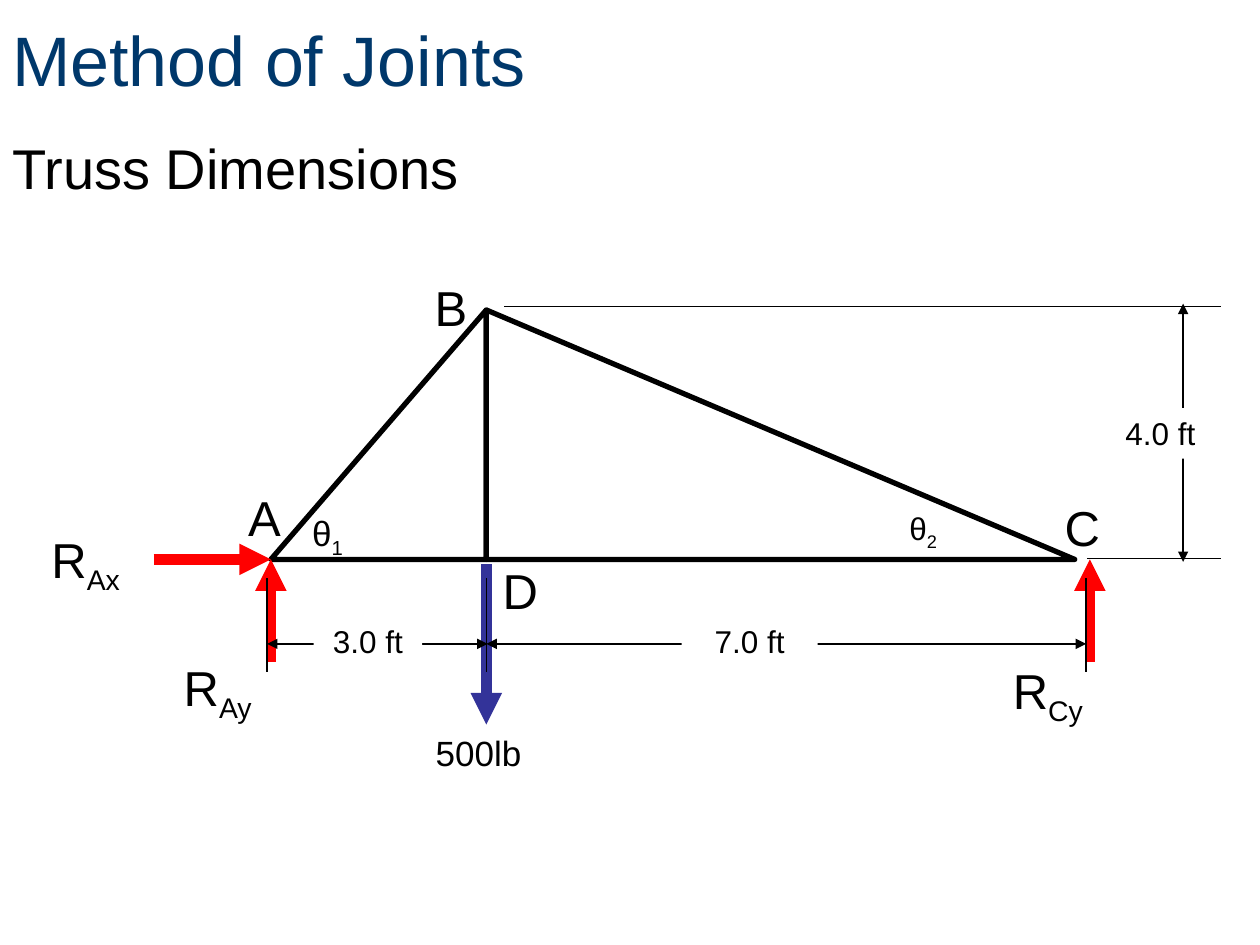
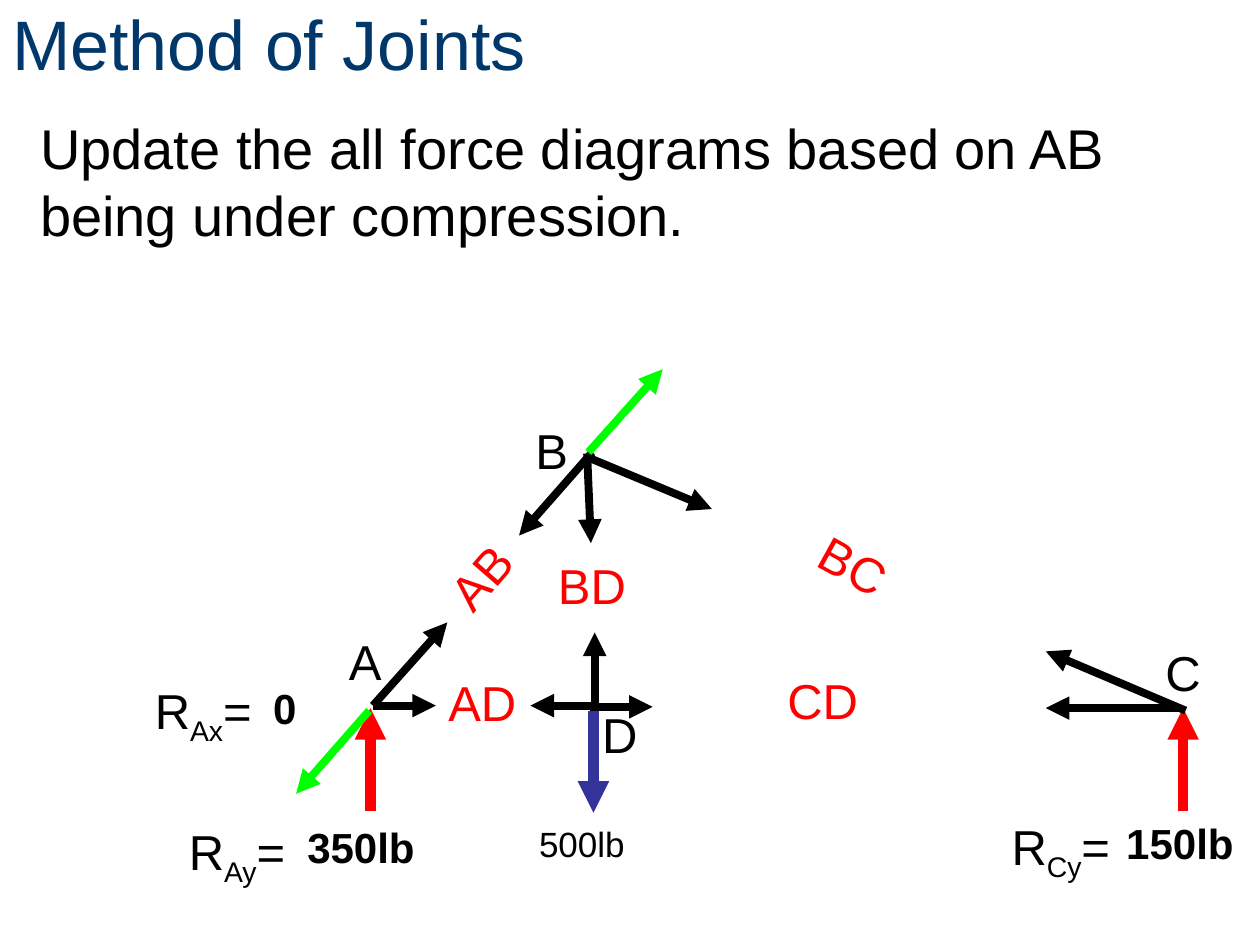
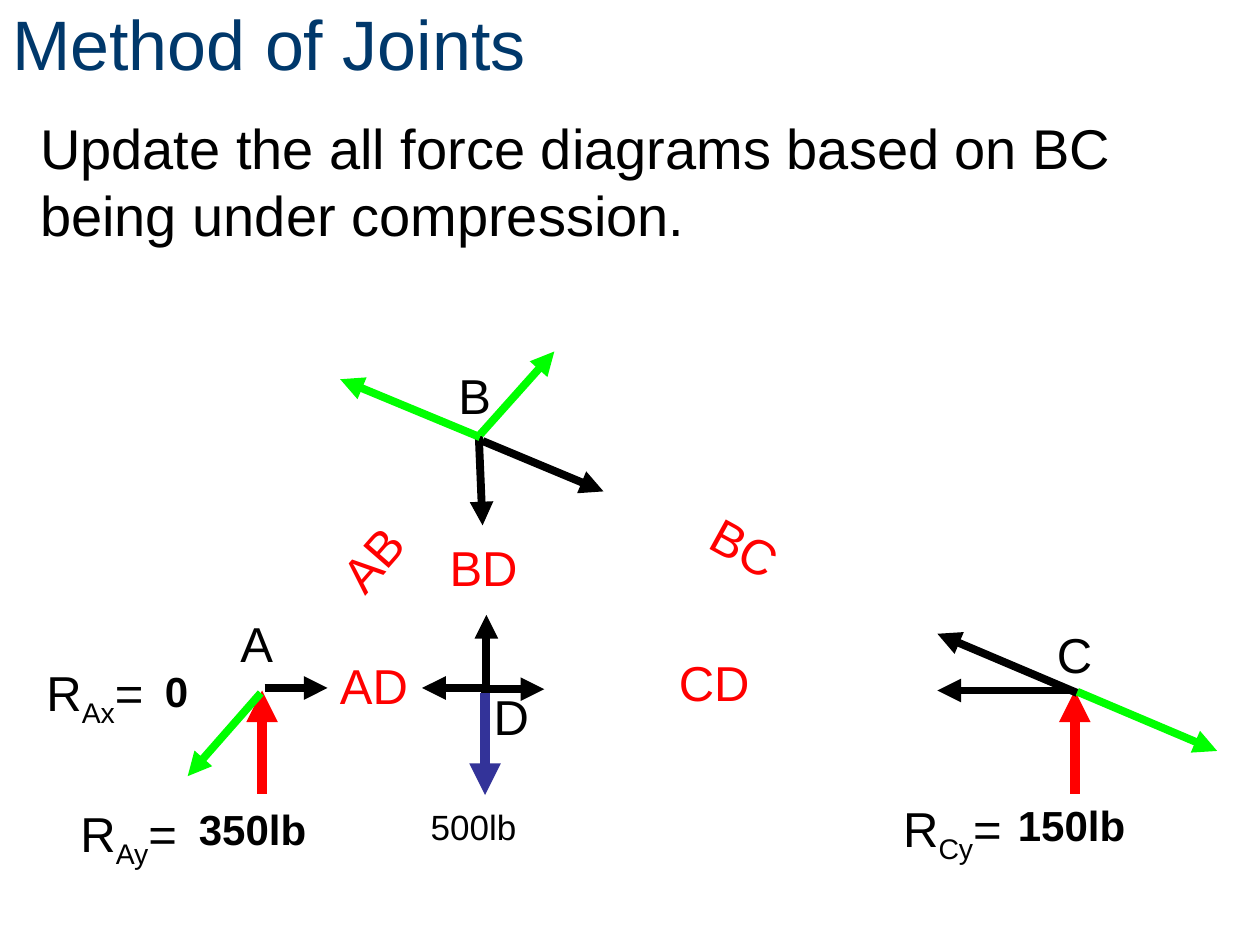
from pptx import Presentation
from pptx.dml.color import RGBColor
from pptx.enum.shapes import MSO_CONNECTOR, MSO_SHAPE
from pptx.enum.text import MSO_ANCHOR, MSO_AUTO_SIZE, PP_ALIGN
from pptx.oxml.ns import qn
from pptx.util import Inches, Pt
from lxml import etree

FONT = "Arial"
BLACK, WHITE, NAVY = "000000", "FFFFFF", "00386B"
RED, GREEN, BLUE = "FF0000", "00FF00", "333399"


def color(hex_string):
    return RGBColor.from_string(hex_string)


class Deck:
    """Shared style, the current slide and the offset of its drawing."""

    def __init__(self):
        self.prs = Presentation()
        self.prs.slide_width, self.prs.slide_height = Inches(10), Inches(7.5)

    def new_slide(self, title_height):
        self.s = self.prs.slides.add_slide(self.prs.slide_layouts[6])
        self.dx = self.dy = 0
        self.text("Method of Joints", 0, 0, 9, title_height, 40, NAVY, grow=False)

    def shift(self, dx, dy):
        self.dx, self.dy = dx, dy

    def point(self, x, y):
        return Inches(x + self.dx), Inches(y + self.dy)

    def text(self, words, x, y, w, h, size=28, ink=BLACK, bold=False,
             rotation=0, fill=None, grow=True):
        """Add a text box; a part between underscores is a subscript."""
        sp = self.s.shapes.add_textbox(*self.point(x, y), Inches(w), Inches(h))
        sp.rotation = rotation
        tf = sp.text_frame
        tf.word_wrap = True
        p = tf.paragraphs[0]
        if grow:
            tf.auto_size = MSO_AUTO_SIZE.SHAPE_TO_FIT_TEXT
        else:
            tf.vertical_anchor = MSO_ANCHOR.MIDDLE
        if fill:
            sp.fill.solid()
            sp.fill.fore_color.rgb = color(fill)
            p.alignment = PP_ALIGN.CENTER
        p.font.name, p.font.size, p.font.bold = FONT, Pt(size), bold
        p.font.color.rgb = color(ink)
        for i, part in enumerate(words.split("_")):
            if part:
                r = p.add_run()
                r.text = part
                if i % 2:
                    r._r.get_or_add_rPr().set("baseline", "-25000")

    def line(self, start, end, ink=BLACK, width=0.75, heads=()):
        cn = self.s.shapes.add_connector(
            MSO_CONNECTOR.STRAIGHT, *self.point(*start), *self.point(*end))
        cn.line.color.rgb = color(ink)
        cn.line.width = Pt(width)
        ln = cn.line._get_or_add_ln()
        for head in heads:
            etree.SubElement(ln, qn("a:" + head), type="triangle")
        etree.SubElement(cn._element.spPr, qn("a:effectLst"))

    def force(self, start, end, ink=BLACK, width=4.5):
        self.line(start, end, ink, width, ["tailEnd"])

    def dimension(self, start, end, label, x, y, w):
        self.line(start, end, width=1, heads=["headEnd", "tailEnd"])
        self.text(label, x, y, w, 0.4, 18, fill=WHITE)

    def triangle(self, x, y, w, h, flip=False):
        sp = self.s.shapes.add_shape(
            MSO_SHAPE.RIGHT_TRIANGLE, *self.point(x, y), Inches(w), Inches(h))
        sp.shadow.inherit = False
        sp.fill.background()
        sp.line.color.rgb = color(BLACK)
        sp.line.width = Pt(3)
        if flip:
            sp._element.spPr.xfrm.set("flipH", "1")

    def joints(self, places):
        for name, (x, y) in places.items():
            self.text(name, x, y, 0.42, 0.57)


def truss_slide(d):
    d.new_slide(0.93)
    d.text("Truss Dimensions", 0, 1.01, 3.89, 0.63, 32)

    # Truss members
    d.triangle(3.86, 2.46, 4.67, 1.98)
    d.triangle(2.15, 2.46, 1.71, 1.98, flip=True)

    # Load and reactions
    d.force((3.86, 4.48), (3.86, 5.75), BLUE, 6)
    for x in (2.15, 8.65):
        d.force((x, 5.25), (x, 4.44), RED, 6)
    d.force((1.22, 4.44), (2.15, 4.44), RED, 6)

    # Dimensions
    for x in (2.12, 3.86, 8.62):
        d.line((x, 4.59), (x, 5.33))
    d.dimension((2.12, 5.11), (3.87, 5.11), "3.0 ft", 2.49, 4.89, 0.86)
    d.dimension((3.86, 5.11), (8.62, 5.11), "7.0 ft", 5.41, 4.89, 1.08)
    d.line((4, 2.43), (9.69, 2.43))
    d.line((8.63, 4.43), (9.69, 4.43))
    d.dimension((9.39, 2.41), (9.39, 4.46), "4.0 ft", 8.75, 3.24, 0.92)

    # Labels
    d.joints({"C": (8.35, 3.9), "A": (1.87, 3.82), "D": (3.89, 4.4), "B": (3.35, 2.15)})
    d.text("R_Ax_", 0.31, 4.15, 1.22, 0.57)
    d.text("R_Ay_", 1.36, 5.17, 1.26, 0.57)
    d.text("R_Cy_", 7.94, 5.19, 1.2, 0.57)
    d.text("θ_1_", 2.38, 4.01, 1.26, 0.43, 20)
    d.text("θ_2_", 7.12, 3.99, 1.34, 0.4, 18)
    d.text("500lb", 3.36, 5.76, 1.05, 0.43, 20)


def force_slide(d, member, offset, b_label, extra_black, extra_green):
    d.new_slide(0.68)
    d.text(f"Update the all force diagrams based on {member} being under compression.",
           0.22, 0.85, 9.56, 1.17, 32)
    d.shift(*offset)

    # Reaction values
    for value, x, y, w in (("0", 2.07, 5.37, 0.55), ("150lb", 8.84, 6.44, 1.16),
                           ("350lb", 2.34, 6.47, 1.51)):
        d.text(value, x, y, w, 0.5, 24, bold=True)

    # Load and reactions
    d.force((4.71, 5.64), (4.71, 6.45), BLUE, 6)
    for x in (2.94, 9.39):
        d.force((x, 6.44), (x, 5.62), RED, 6)

    # Member forces at each joint
    for start, end in [
        ((2.96, 5.6), (3.46, 5.6)),
        ((4.71, 5.6), (4.21, 5.6)),
        ((4.68, 5.61), (5.18, 5.61)),
        ((9.37, 5.62), (8.3, 5.62)),
        ((4.72, 5.63), (4.72, 5.02)),
        ((4.66, 3.6), (4.69, 4.31)),
        ((4.69, 3.64), (5.65, 4.04)),
        ((9.41, 5.64), (8.3, 5.17)),
    ] + extra_black:
        d.force(start, end)

    # Labels
    d.joints({"C": (9.15, 5.05), "A": (2.67, 4.96), "D": (4.68, 5.54), "B": b_label})
    d.text("R_Ay_=", 1.4, 6.47, 1.29, 0.57)
    d.text("R_Cy_=", 7.93, 6.43, 1.47, 0.57)
    d.text("R_Ax_=", 1.13, 5.35, 1.21, 0.57)
    d.text("500lb", 4.18, 6.48, 1.07, 0.43, 20)
    for name, x, y, w, rotation in (
            ("AB", 3.41, 4.19, 0.99, 311.1), ("BC", 6.39, 4.26, 0.99, 28.9),
            ("AD", 3.46, 5.29, 1.03, 0), ("CD", 6.15, 5.27, 1.03, 0),
            ("BD", 4.33, 4.36, 1.03, 0)):
        d.text(name, x, y, w, 0.57, ink=RED, rotation=rotation)

    # Compression forces
    for start, end in [((2.93, 5.64), (2.35, 6.3)),
                       ((4.67, 3.59), (5.26, 2.93))] + extra_green:
        d.force(start, end, GREEN)


def main():
    d = Deck()
    truss_slide(d)
    force_slide(d, "AB", (0, 0), (4.15, 3.29),
                [((2.96, 5.6), (3.55, 4.94)), ((4.7, 3.59), (4.12, 4.25))], [])
    force_slide(d, "BC", (-0.86, -0.14), (4.4, 2.99), [],
                [((4.67, 3.61), (3.56, 3.15)), ((9.41, 5.63), (10.52, 6.1))])
    d.prs.save("out.pptx")


if __name__ == "__main__":
    main()
